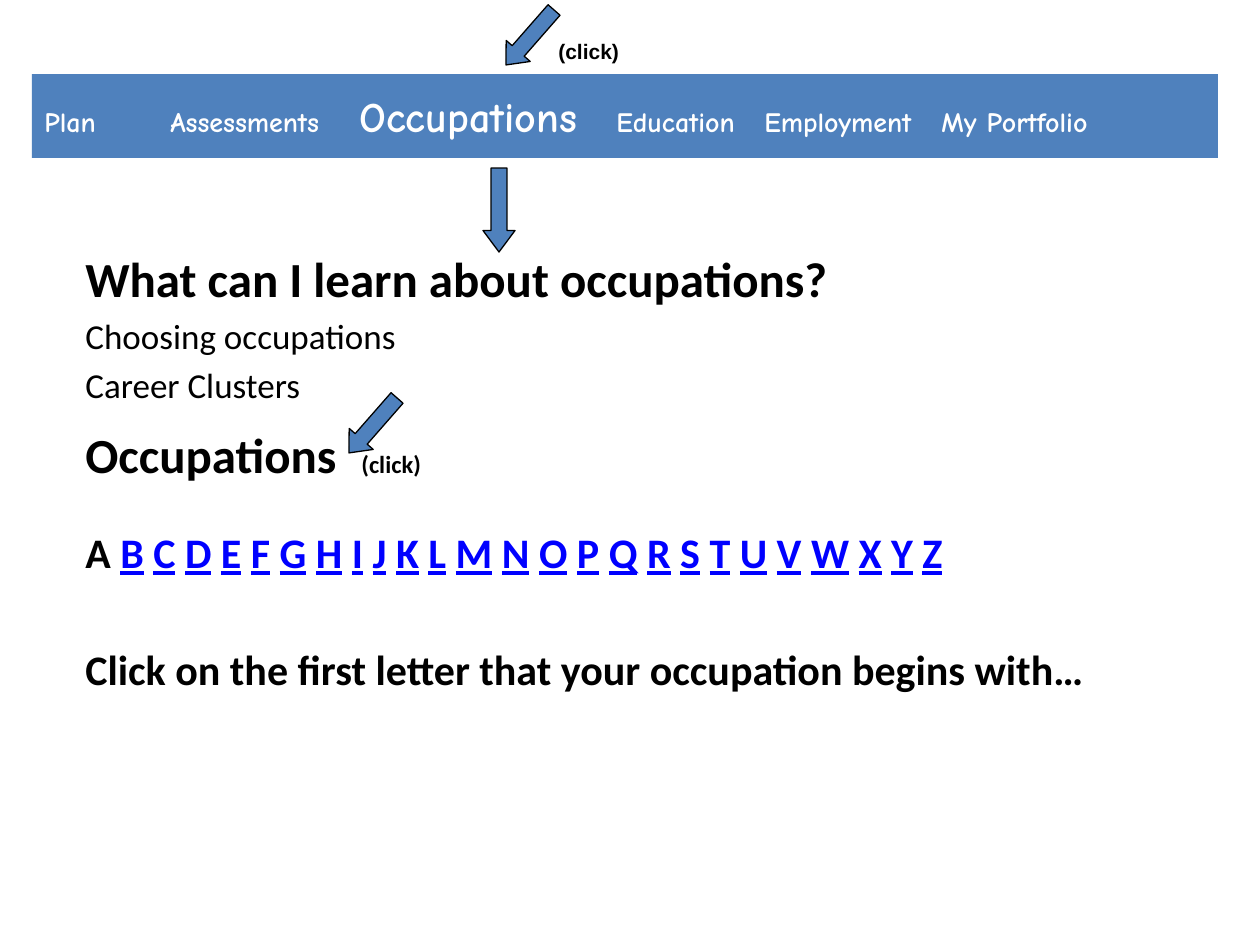
from dataclasses import dataclass

from lxml import etree
from pptx import Presentation
from pptx.dml.color import RGBColor
from pptx.enum.shapes import MSO_SHAPE
from pptx.enum.text import MSO_ANCHOR
from pptx.oxml.ns import qn
from pptx.util import Pt

DOWN, RECT = MSO_SHAPE.DOWN_ARROW, MSO_SHAPE.RECTANGLE
MIDDLE = MSO_ANCHOR.MIDDLE


@dataclass(frozen=True)
class Theme:
    black: RGBColor = RGBColor(0, 0, 0)
    white: RGBColor = RGBColor(255, 255, 255)
    blue: RGBColor = RGBColor(0x4F, 0x81, 0xBD)
    link: RGBColor = RGBColor(0, 0, 255)
    body: str = "Calibri"
    menu: str = "Comic Neue"
    note: str = "Arial"
    head: int = 28
    big: int = 24
    text: int = 20
    item: int = 16
    hint: int = 14
    tag: int = 12


T = Theme()

# Menu: word, left edge from the first word, size
MENU = [
    ("Plan", 0, T.item),
    ("Assessments", 126, T.item),
    ("Occupations", 315, T.big),
    ("Education", 572, T.item),
    ("Employment", 720, T.item),
    ("My Portfolio", 897, T.item),
]
CLICK = "(click)"
LETTERS = "ABCDEFGHIJKLMNOPQRSTUVWXYZ"
# Body: text, size, bold, space before in points
LINES = [
    ("What can I learn about occupations?", T.head, True, 6),
    ("Choosing occupations", T.text, False, 4),
    ("Career Clusters", T.text, False, 4),
    ("Occupations", T.head, True, 11),
    (LETTERS, T.big, True, 25),
    ("Click on the first letter that your occupation begins with…", T.big, True, 38),
]
HINT_TAB = 276

# Arrows: left, top, width, height, turn
ARROWS = [
    (483, 168, 32, 84, 0),
    (514, 1, 32, 73, 41.2),
    (357, 389, 32, 73, 41.2),
]
BAR = (32, 74, 1186, 84)
BODY = (73, 242, 1134, 624)
TAG = (546, 32, 86, 38)


def px(n):
    return round(n * 914400 / 126)


def box(slide, place, wrap=True):
    frame = slide.shapes.add_textbox(*map(px, place)).text_frame
    frame.word_wrap = wrap
    return frame


def form(slide, kind, place):
    shape = slide.shapes.add_shape(kind, *map(px, place))
    shape.shadow.inherit = False
    shape.fill.solid()
    shape.fill.fore_color.rgb = T.blue
    return shape


def style(para, face, size, color, bold=True):
    font = para.font
    font.name, font.size, font.bold = face, Pt(size), bold
    font.color.rgb = color


def add(para, text, size=None):
    run = para.add_run()
    run.text = text
    if size:
        run.font.size = Pt(size)
    return run


def tabs(para, stops):
    """Set left tab stops, ahead of the paragraph's default run properties."""
    props = para._p.get_or_add_pPr()
    group = etree.Element(qn("a:tabLst"))
    for stop in stops:
        etree.SubElement(group, qn("a:tab"), pos=str(px(stop)), algn="l")
    props.find(qn("a:defRPr")).addprevious(group)


def spell(para):
    """Write the alphabet with every letter but the first as a link."""
    add(para, LETTERS[0])
    for letter in LETTERS[1:]:
        add(para, " ")
        font = add(para, letter).font
        font.underline = True
        font.color.rgb = T.link


def body(slide):
    frame = box(slide, BODY)
    for i, (text, size, bold, gap) in enumerate(LINES):
        para = frame.add_paragraph() if i else frame.paragraphs[0]
        para.space_before = Pt(gap)
        style(para, T.body, size, T.black, bold)
        if text == LETTERS:
            spell(para)
            continue
        add(para, text)
        if text == "Occupations":
            tabs(para, [HINT_TAB])
            add(para, "\t" + CLICK, T.hint)


def menu(slide):
    bar = form(slide, RECT, BAR)
    bar.line.fill.background()
    frame = bar.text_frame
    frame.vertical_anchor = MIDDLE
    para = frame.paragraphs[0]
    para.alignment = 1
    style(para, T.menu, T.item, T.white)
    tabs(para, [left for _, left, _ in MENU[1:]])
    for word, left, size in MENU:
        add(para, "\t" + word if left else word, size)


def main():
    deck = Presentation()
    deck.slide_width, deck.slide_height = px(1260), px(945)
    slide = deck.slides.add_slide(deck.slide_layouts[6])

    body(slide)
    menu(slide)
    para = box(slide, TAG, wrap=False).paragraphs[0]
    style(para, T.note, T.tag, T.black)
    add(para, CLICK)

    for *place, turn in ARROWS:
        arrow = form(slide, DOWN, place)
        arrow.rotation = turn
        arrow.adjustments[1] = 0.67 if turn == 0 else 0.58
        arrow.line.color.rgb = T.black
        arrow.line.width = Pt(0.75)

    deck.save("out.pptx")


if __name__ == "__main__":
    main()
